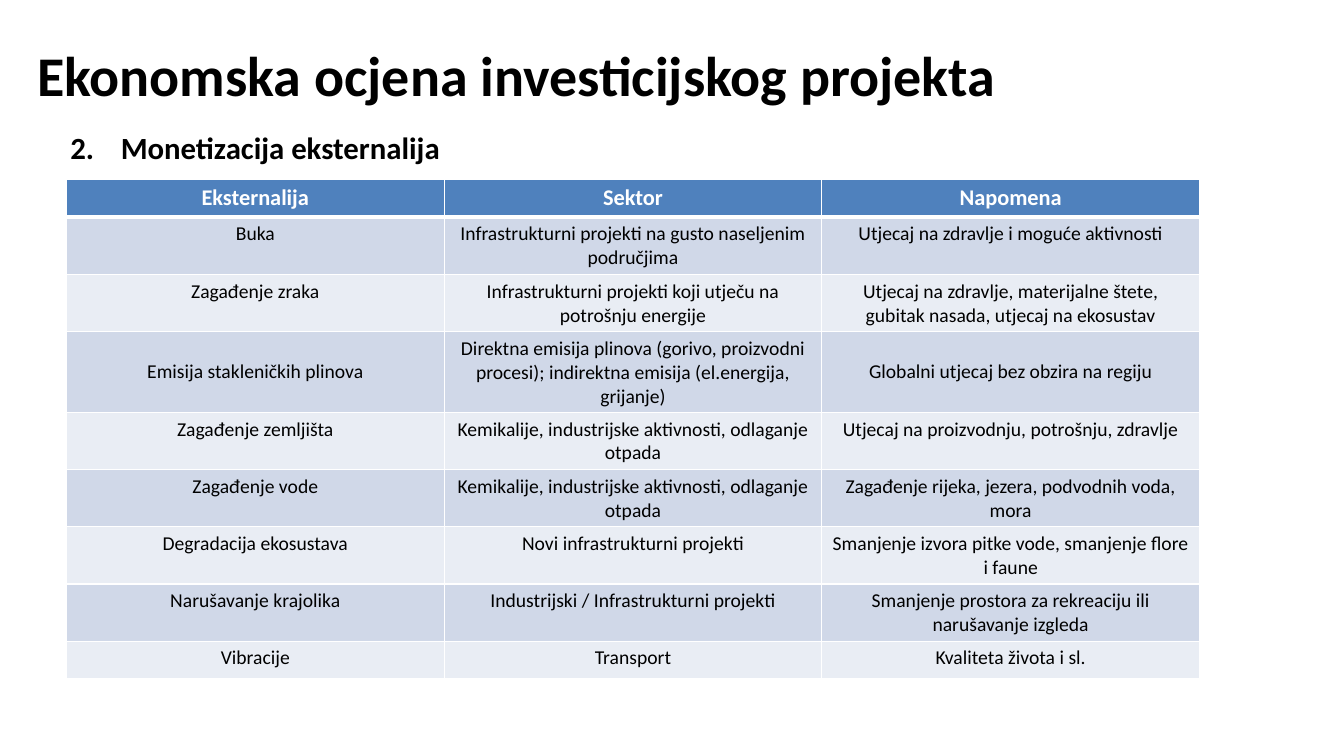
from dataclasses import dataclass

from lxml.etree import SubElement
from pptx import Presentation
from pptx.dml.color import RGBColor
from pptx.enum.text import MSO_ANCHOR, PP_ALIGN
from pptx.oxml.ns import qn
from pptx.slide import Slide
from pptx.table import _Cell
from pptx.text.text import _Paragraph
from pptx.util import Pt

COLORS = {
    "ink": "000000",
    "white": "FFFFFF",
    "header": "4F81BD",
    "dark_band": "D0D8E8",
    "light_band": "E9EDF4",
}
FONT = "Calibri"
TABLE_LEFT, TABLE_TOP, COLUMN_WIDTH = 47.5, 128.2, 269.8


@dataclass
class Heading:
    text: str
    left: float
    top: float
    width: float
    height: float
    size: float
    anchor: MSO_ANCHOR


@dataclass
class Row:
    cells: tuple[str, str, str]
    height: float = 40.6
    anchor: MSO_ANCHOR = MSO_ANCHOR.TOP


TITLE = Heading("Ekonomska ocjena investicijskog projekta",
                19.5, 3.6, 828, 104.4, 40, MSO_ANCHOR.MIDDLE)
SUBTITLE = Heading("Monetizacija eksternalija",
                   43.2, 91.4, 869.8, 370, 22, MSO_ANCHOR.TOP)

ROWS = [
    Row(("Eksternalija", "Sektor", "Napomena"), 27),
    Row(("Buka",
         "Infrastrukturni projekti na gusto naseljenim područjima",
         "Utjecaj na zdravlje i moguće aktivnosti")),
    Row(("Zagađenje zraka",
         "Infrastrukturni projekti koji utječu na potrošnju energije",
         "Utjecaj na zdravlje, materijalne štete, gubitak nasada, utjecaj na ekosustav")),
    Row(("Emisija stakleničkih plinova",
         "Direktna emisija plinova (gorivo, proizvodni procesi); "
         "indirektna emisija (el.energija, grijanje)",
         "Globalni utjecaj bez obzira na regiju"), 57, MSO_ANCHOR.MIDDLE),
    Row(("Zagađenje zemljišta",
         "Kemikalije, industrijske aktivnosti, odlaganje otpada",
         "Utjecaj na proizvodnju, potrošnju, zdravlje")),
    Row(("Zagađenje vode",
         "Kemikalije, industrijske aktivnosti, odlaganje otpada",
         "Zagađenje rijeka, jezera, podvodnih voda, mora")),
    Row(("Degradacija ekosustava",
         "Novi infrastrukturni projekti",
         "Smanjenje izvora pitke vode, smanjenje flore i faune")),
    Row(("Narušavanje krajolika",
         "Industrijski / Infrastrukturni projekti",
         "Smanjenje prostora za rekreaciju ili narušavanje izgleda")),
    Row(("Vibracije", "Transport", "Kvaliteta života i sl."), 27),
]


def set_font(para: _Paragraph, size: float, color: str, bold: bool) -> None:
    para.font.name = FONT
    para.font.size = Pt(size)
    para.font.bold = bold
    para.font.color.rgb = RGBColor.from_string(COLORS[color])


def add_heading(page: Slide, heading: Heading) -> _Paragraph:
    box = page.shapes.add_textbox(Pt(heading.left), Pt(heading.top),
                                  Pt(heading.width), Pt(heading.height))
    box.text_frame.word_wrap = True
    box.text_frame.vertical_anchor = heading.anchor
    para = box.text_frame.paragraphs[0]
    para.text = heading.text
    para.line_spacing = 0.9
    return para


def add_number(para: _Paragraph, start: int, indent: float) -> None:
    properties = para._p.get_or_add_pPr()
    properties.set("marL", str(Pt(indent)))
    properties.set("indent", str(-Pt(indent)))
    SubElement(properties, qn("a:buAutoNum"), type="arabicPeriod", startAt=str(start))


def add_borders(cell: _Cell, top: float, bottom: float) -> None:
    properties = cell._tc.get_or_add_tcPr()
    for side, width in (("L", 1), ("R", 1), ("T", top), ("B", bottom)):
        line = SubElement(properties, qn(f"a:ln{side}"), w=str(Pt(width)))
        fill = SubElement(line, qn("a:solidFill"))
        SubElement(fill, qn("a:srgbClr"), val=COLORS["white"])


def fill_cell(cell: _Cell, text: str, row_index: int, anchor: MSO_ANCHOR) -> None:
    is_header = row_index == 0
    band = "header" if is_header else ("light_band", "dark_band")[row_index % 2]
    add_borders(cell, top=3 if row_index == 1 else 1, bottom=3 if is_header else 1)
    cell.fill.solid()
    cell.fill.fore_color.rgb = RGBColor.from_string(COLORS[band])
    cell.vertical_anchor = anchor
    para = cell.text_frame.paragraphs[0]
    para.text = text
    para.alignment = PP_ALIGN.CENTER
    set_font(para, 16 if is_header else 14, "white" if is_header else "ink", is_header)


def add_externalities(page: Slide, rows: list[Row]) -> None:
    column_count = len(rows[0].cells)
    table = page.shapes.add_table(
        len(rows), column_count, Pt(TABLE_LEFT), Pt(TABLE_TOP),
        Pt(COLUMN_WIDTH * column_count), Pt(sum(row.height for row in rows))).table
    for column in table.columns:
        column.width = Pt(COLUMN_WIDTH)
    for row_index, row in enumerate(rows):
        table.rows[row_index].height = Pt(row.height)
        for column_index, text in enumerate(row.cells):
            fill_cell(table.cell(row_index, column_index), text, row_index, row.anchor)


def main() -> None:
    deck = Presentation()
    deck.slide_width, deck.slide_height = Pt(960), Pt(540)
    page = deck.slides.add_slide(deck.slide_layouts[6])

    # Title and numbered subtitle
    title = add_heading(page, TITLE)
    set_font(title, TITLE.size, "ink", True)
    subtitle = add_heading(page, SUBTITLE)
    add_number(subtitle, start=2, indent=36)
    set_font(subtitle, SUBTITLE.size, "ink", True)

    # Table of externalities
    add_externalities(page, ROWS)

    deck.save("out.pptx")


if __name__ == "__main__":
    main()
